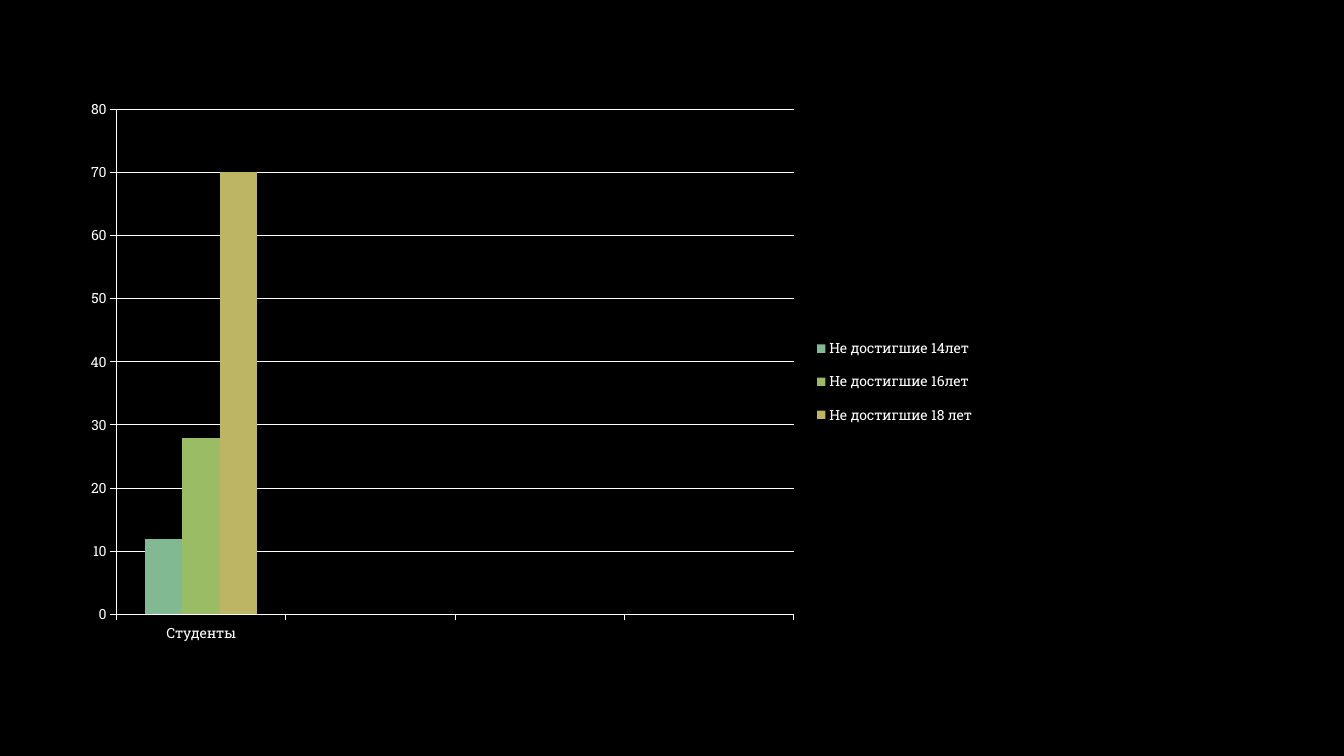
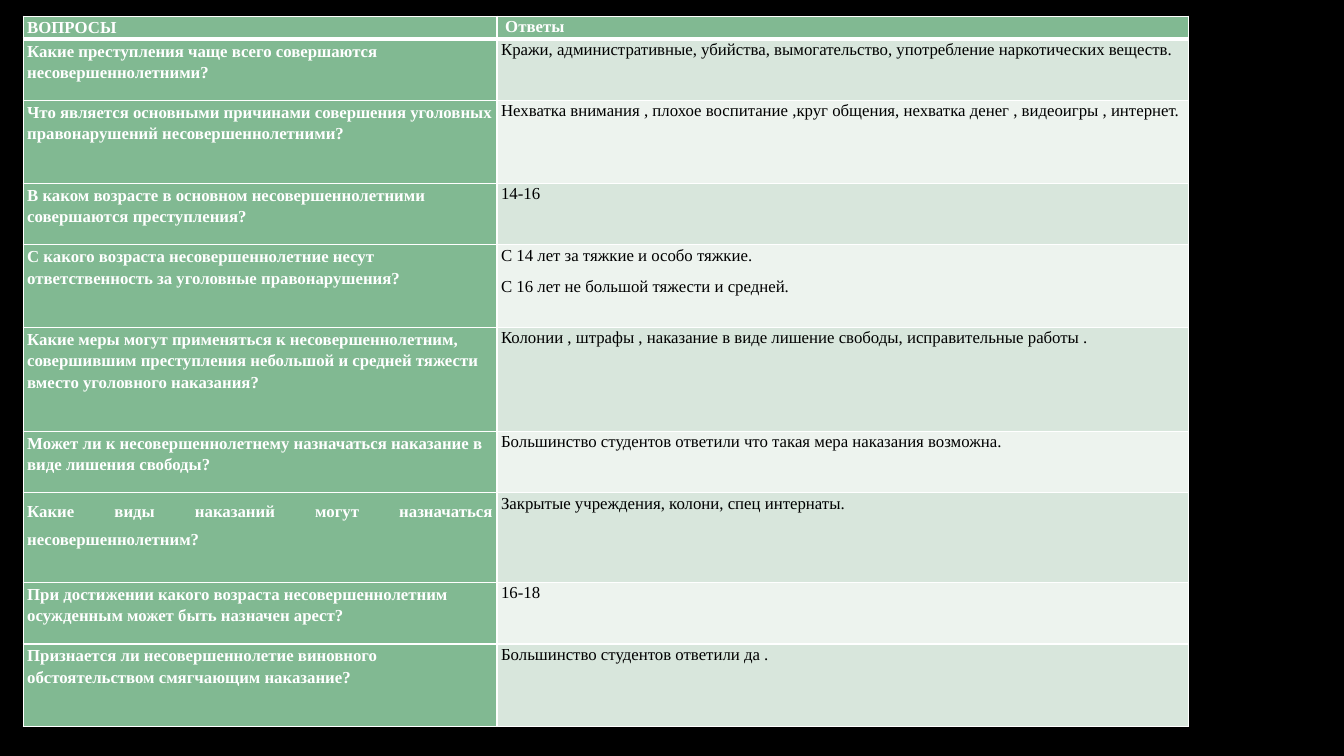
"""Build a chart slide and a table slide about a student survey on juvenile offences."""
from dataclasses import dataclass

from lxml import etree
from pptx import Presentation
from pptx.chart.data import CategoryChartData
from pptx.dml.color import RGBColor
from pptx.enum.chart import XL_CHART_TYPE, XL_LEGEND_POSITION, XL_TICK_MARK
from pptx.enum.text import PP_ALIGN
from pptx.oxml import parse_xml
from pptx.oxml.ns import nsdecls, qn
from pptx.util import Inches, Pt

COLUMN_CLUSTERED = XL_CHART_TYPE.COLUMN_CLUSTERED
LEGEND_RIGHT = XL_LEGEND_POSITION.RIGHT
TICK_OUTSIDE = XL_TICK_MARK.OUTSIDE
ALIGN_LEFT, ALIGN_JUSTIFY = PP_ALIGN.LEFT, PP_ALIGN.JUSTIFY


@dataclass(frozen=True)
class Theme:
    background: str = "000000"
    light: str = "FFFFFF"
    dark: str = "000000"
    green: str = "81B992"
    lime: str = "9ABC65"
    sand: str = "BDB564"
    bands: tuple[str, str] = ("D8E6DC", "EDF3EE")
    chart_font: str = "Roboto Slab"
    table_font: str = "Times New Roman"
    chart_size: int = 10
    table_size: int = 12
    thin: float = 1
    thick: float = 3


@dataclass(frozen=True)
class Series:
    name: str
    value: int
    color: str


@dataclass(frozen=True)
class Row:
    question: str
    answers: tuple[str, ...]
    height: float
    justified: bool = False


THEME = Theme()
SERIES = (
    Series("Не достигшие 14лет", 12, THEME.green),
    Series("Не достигшие 16лет", 28, THEME.lime),
    Series("Не достигшие 18 лет", 70, THEME.sand),
)
CATEGORIES = ("Студенты", "", "", "")
COLUMN_WIDTHS = (4.7, 6.86)
ROWS = (
    Row("ВОПРОСЫ", (" Ответы",), 0.23),
    Row("Какие преступления чаще всего совершаются несовершеннолетними?",
        ("Кражи, административные, убийства, вымогательство, употребление наркотических веществ.",), 0.61),
    Row("Что является основными причинами совершения уголовных правонарушений несовершеннолетними?",
        ("Нехватка внимания , плохое воспитание ,круг общения, нехватка денег , видеоигры , интернет.",), 0.82),
    Row("В каком возрасте в основном несовершеннолетними совершаются преступления?", ("14-16",), 0.61),
    Row("С какого возраста несовершеннолетние несут ответственность за уголовные правонарушения?",
        ("С 14 лет за тяжкие и особо тяжкие.", "С 16 лет не большой тяжести и средней."), 0.82),
    Row("Какие меры могут применяться к несовершеннолетним, совершившим преступления "
        "небольшой и средней тяжести вместо уголовного наказания?",
        ("Колонии , штрафы , наказание в виде лишение свободы, исправительные работы .",), 1.03),
    Row("Может ли к несовершеннолетнему назначаться наказание в виде лишения свободы?",
        ("Большинство студентов ответили что такая мера наказания возможна.",), 0.61),
    Row("Какие виды наказаний могут назначаться несовершеннолетним?",
        ("Закрытые учреждения, колони, спец интернаты.",), 0.89, justified=True),
    Row("При достижении какого возраста несовершеннолетним осужденным может быть назначен арест?",
        ("16-18",), 0.61),
    Row("Признается ли несовершеннолетие виновного обстоятельством смягчающим наказание?",
        ("Большинство студентов ответили да .",), 0.82),
)


def rgb(color: str) -> RGBColor:
    return RGBColor.from_string(color)


def manual_layout(x: float, y: float, width: float, height: float, inner: bool = False):
    target = '<c:layoutTarget val="inner"/>' if inner else ""
    return parse_xml(
        f'<c:layout {nsdecls("c")}><c:manualLayout>{target}'
        '<c:xMode val="edge"/><c:yMode val="edge"/>'
        f'<c:x val="{x}"/><c:y val="{y}"/><c:w val="{width}"/><c:h val="{height}"/>'
        '</c:manualLayout></c:layout>')


def place_chart_parts(chart) -> None:
    plot_area = chart.element.xpath("c:chart/c:plotArea")[0]
    for layout in plot_area.findall(qn("c:layout")):
        plot_area.remove(layout)
    plot_area.insert(0, manual_layout(0.05, 0.04, 0.74, 0.89, inner=True))
    legend = chart.element.xpath("c:chart/c:legend")[0]
    for layout in legend.findall(qn("c:layout")):
        legend.remove(layout)
    legend.find(qn("c:legendPos")).addnext(manual_layout(0.81, 0.42, 0.18, 0.2))


def add_survey_chart(slide) -> None:
    data = CategoryChartData()
    data.categories = CATEGORIES
    for series in SERIES:
        data.add_series(series.name, (series.value, None, None, None))
    chart = slide.shapes.add_chart(
        COLUMN_CLUSTERED, Inches(0.7), Inches(0.86), Inches(9.08), Inches(5.63), data).chart
    chart.has_title = False
    chart.font.name = THEME.chart_font
    chart.font.size = Pt(THEME.chart_size)
    chart.font.color.rgb = rgb(THEME.light)
    chart.has_legend = True
    chart.legend.position = LEGEND_RIGHT
    chart.legend.include_in_layout = False

    plot = chart.plots[0]
    plot.gap_width = 150
    plot.overlap = 0
    plot.vary_by_categories = False
    for drawn, series in zip(plot.series, SERIES):
        drawn.format.fill.solid()
        drawn.format.fill.fore_color.rgb = rgb(series.color)

    value_axis = chart.value_axis
    value_axis.minimum_scale, value_axis.maximum_scale, value_axis.major_unit = 0, 80, 10
    value_axis.has_major_gridlines = True
    for axis in (chart.category_axis, value_axis):
        axis.major_tick_mark = TICK_OUTSIDE
    for lined in (chart.category_axis, value_axis, value_axis.major_gridlines):
        lined.format.line.color.rgb = rgb(THEME.light)
        lined.format.line.width = Pt(0.75)
    place_chart_parts(chart)


def set_borders(cell, top: float, bottom: float) -> None:
    properties = cell._tc.get_or_add_tcPr()
    widths = {"lnL": THEME.thin, "lnR": THEME.thin, "lnT": top, "lnB": bottom}
    for index, (side, width) in enumerate(widths.items()):
        line = etree.Element(qn(f"a:{side}"), w=str(Pt(width)))
        fill = etree.SubElement(line, qn("a:solidFill"))
        etree.SubElement(fill, qn("a:srgbClr"), val=THEME.light)
        properties.insert(index, line)


def fill_cell(cell, texts: tuple[str, ...], fill: str, emphasized: bool,
              line_spacing: float, space_after: float, alignment: PP_ALIGN) -> None:
    cell.margin_left = cell.margin_right = Inches(0.04)
    cell.margin_top = cell.margin_bottom = 0
    cell.fill.solid()
    cell.fill.fore_color.rgb = rgb(fill)
    cell.text_frame.text = "\n".join(texts)
    for paragraph in cell.text_frame.paragraphs:
        paragraph.alignment = alignment
        paragraph.line_spacing = line_spacing
        paragraph.space_after = Pt(space_after)
        paragraph.font.name = THEME.table_font
        paragraph.font.size = Pt(THEME.table_size)
        paragraph.font.bold = emphasized
        paragraph.font.color.rgb = rgb(THEME.light if emphasized else THEME.dark)


def add_answer_table(slide) -> None:
    table = slide.shapes.add_table(
        len(ROWS), len(COLUMN_WIDTHS), Inches(0.23), Inches(0.16),
        Inches(sum(COLUMN_WIDTHS)), Inches(sum(row.height for row in ROWS))).table
    for column, width in zip(table.columns, COLUMN_WIDTHS):
        column.width = Inches(width)
    for index, row in enumerate(ROWS):
        table.rows[index].height = Inches(row.height)
        header = index == 0
        question, answer = table.cell(index, 0), table.cell(index, 1)
        fill_cell(question, (row.question,), THEME.green, True, 1.5 if row.justified else 1.15, 0,
                  ALIGN_JUSTIFY if row.justified else ALIGN_LEFT)
        answer_fill = THEME.green if header else THEME.bands[(index - 1) % 2]
        fill_cell(answer, row.answers, answer_fill, header, 1.07, 8, ALIGN_LEFT)
        for cell in (question, answer):
            set_borders(cell, THEME.thick if index == 1 else THEME.thin,
                        THEME.thick if header else THEME.thin)


def main() -> None:
    presentation = Presentation()
    presentation.slide_width = Inches(13.33)
    presentation.slide_height = Inches(7.5)
    background = presentation.slide_master.background.fill
    background.solid()
    background.fore_color.rgb = rgb(THEME.background)
    blank = presentation.slide_layouts[6]
    for draw in (add_survey_chart, add_answer_table):
        draw(presentation.slides.add_slide(blank))
    presentation.save("out.pptx")


if __name__ == "__main__":
    main()
